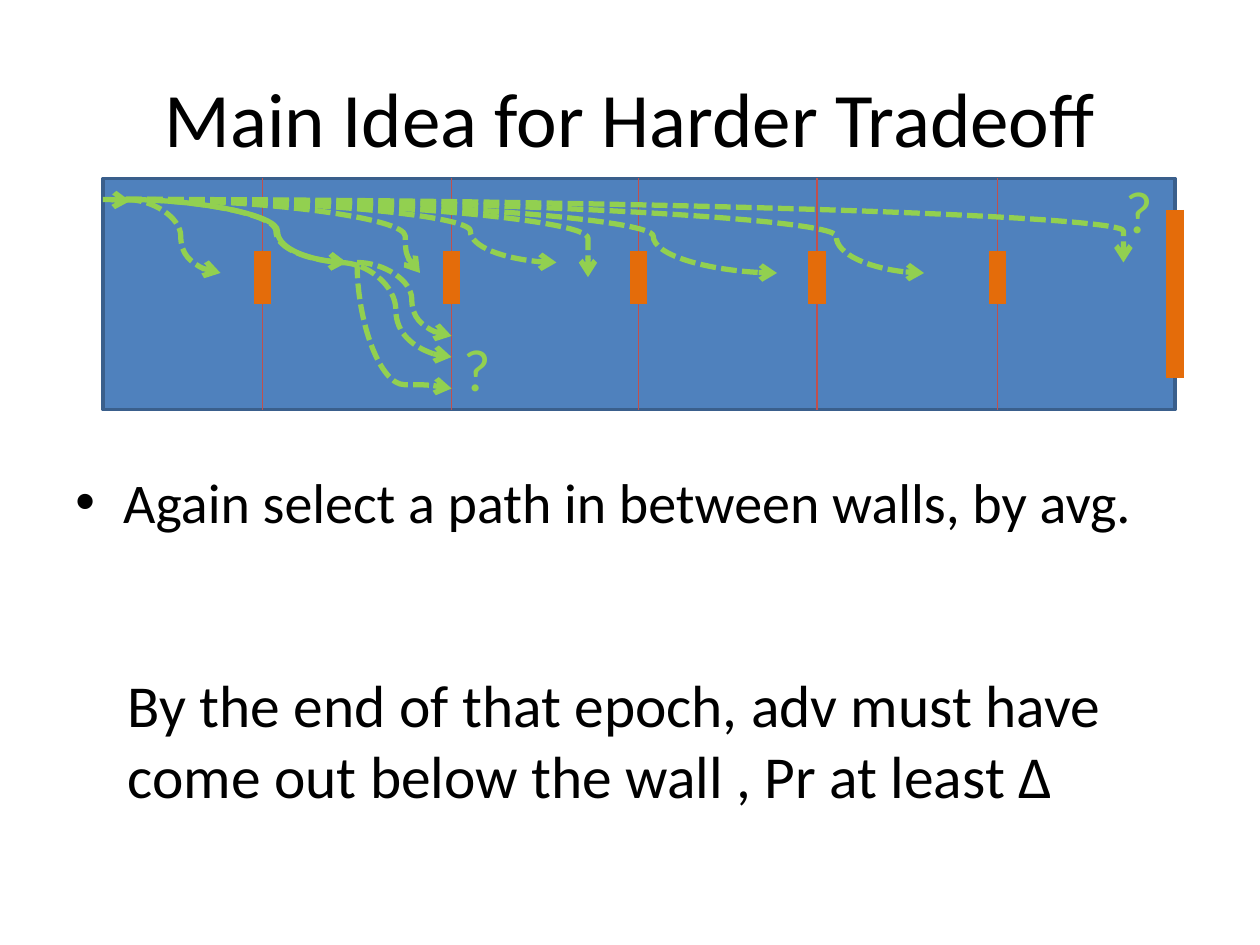
"""Build the slide on a harder tradeoff: a walled strip, candidate paths and two remarks."""
from dataclasses import dataclass

from lxml.etree import SubElement
from pptx import Presentation
from pptx.dml.color import RGBColor
from pptx.enum.dml import MSO_LINE_DASH_STYLE as Dash
from pptx.enum.shapes import MSO_CONNECTOR as Link, MSO_SHAPE as Preset
from pptx.enum.text import MSO_ANCHOR as Anchor, PP_ALIGN as Align
from pptx.oxml.ns import qn
from pptx.util import Inches, Pt


@dataclass(frozen=True)
class Theme:
    font: str = "Calibri"
    ink: str = "000000"
    strip: str = "4F81BD"
    strip_edge: str = "3A5F8C"
    divider: str = "C0504D"
    wall: str = "E46C0A"
    route: str = "92D050"
    title_size: int = 44
    bullet_size: int = 32
    remark_size: int = 34


theme = Theme()
deck = Presentation()
deck.slide_width, deck.slide_height = Inches(10), Inches(7.5)
slide = deck.slides.add_slide(deck.slide_layouts[6])
COL = deck.slide_width / 120
ROW = deck.slide_height / 90


def add_words(words, col, row, cols, rows, size, color=theme.ink, wrap=True):
    box = slide.shapes.add_textbox(int(col * COL), int(row * ROW), int(cols * COL), int(rows * ROW))
    frame = box.text_frame
    frame.word_wrap = wrap
    frame.text = words
    font = frame.paragraphs[0].runs[0].font
    font.name, font.size = theme.font, Pt(size)
    font.color.rgb = RGBColor.from_string(color)
    return frame


def add_link(kind, start, end, color, width, bend=None, dashed=False):
    ends = (start[0] * COL, start[1] * ROW, end[0] * COL, end[1] * ROW)
    link = slide.shapes.add_connector(kind, *map(int, ends))
    link.line.color.rgb = RGBColor.from_string(color)
    link.line.width = Pt(width)
    if dashed:
        link.line.dash_style = Dash.SQUARE_DOT
    properties = link._element.spPr
    if bend is not None:
        guides = properties.find(qn("a:prstGeom")).get_or_add_avLst()
        SubElement(guides, qn("a:gd"), name="adj1", fmla=f"val {round(bend * 100000)}")
        SubElement(properties.find(qn("a:ln")), qn("a:tailEnd"), type="arrow")
    SubElement(properties, qn("a:effectLst"))
    return link


title = add_words("Main Idea for Harder Tradeoff", 6, 3.6, 108, 15, theme.title_size)
title.vertical_anchor = Anchor.MIDDLE
title.paragraphs[0].alignment = Align.CENTER

advice = add_words("Again select a path in between walls, by avg.", 6, 21, 108, 59.4, theme.bullet_size)
advice.margin_top = Inches(1.96)
bullet = advice.paragraphs[0]._p.get_or_add_pPr()
bullet.set("marL", str(Inches(0.38)))
bullet.set("indent", str(-Inches(0.38)))
SubElement(bullet, qn("a:buFont"), typeface="Arial")
SubElement(bullet, qn("a:buChar"), char="•")

LEFT, TOP, RIGHT, BOTTOM = 9.8, 17, 111.9, 39
strip = slide.shapes.add_shape(
    Preset.RECTANGLE, int(LEFT * COL), int(TOP * ROW), int((RIGHT - LEFT) * COL), int((BOTTOM - TOP) * ROW)
)
strip.shadow.inherit = False
strip.fill.solid()
strip.fill.fore_color.rgb = RGBColor.from_string(theme.strip)
strip.line.color.rgb = RGBColor.from_string(theme.strip_edge)
strip.line.width = Pt(2)

add_link(Link.STRAIGHT, (RIGHT, 20), (RIGHT, 36), theme.wall, 10)
add_link(Link.CURVE, (LEFT, 19), (12.4, 19.15), theme.route, 3, 0.5)

wall_cols = (25, 43, 77.8, 60.8, 95)
for top, bottom, color, width in ((TOP, BOTTOM, theme.divider, 1), (23.9, 29, theme.wall, 10)):
    for col in wall_cols:
        add_link(Link.STRAIGHT, (col, top), (col, bottom), color, width)

add_words(
    "By the end of that epoch, adv must have come out below the wall , Pr at least ∆",
    11, 63, 98, 15, theme.remark_size,
)

add_link(Link.CURVE, (11.8, 19), (33, 25), theme.route, 3, 0.69)

for start, end, bend in (((32.4, 25), (43, 34), 0.5), ((34, 25), (43, 32), 0.58)):
    add_link(Link.CURVE, start, end, theme.route, 3, bend, True)
plunge = add_link(Link.CURVE, (32.5, 26.5), (44.5, 35.5), theme.route, 3, 0.97, True)
turn = plunge._element.spPr.find(qn("a:xfrm"))
turn.set("rot", str(270 * 60000))
turn.set("flipH", "1")

fan = (
    (21, 26, 0.58), (56, 26.4, 1), (40, 26, 0.95), (74, 26, 0.81),
    (88, 26, 0.89), (107, 25, 1), (33, 25, 0.68), (53, 25, 0.8),
)
for col, row, bend in fan:
    add_link(Link.CURVE, (12, 19), (col, row), theme.route, 3, bend, True)

for col, row in ((43, 31), (106, 16)):
    add_words("?", col, row, 5, 8, theme.remark_size, theme.route, False)

deck.save("out.pptx")
